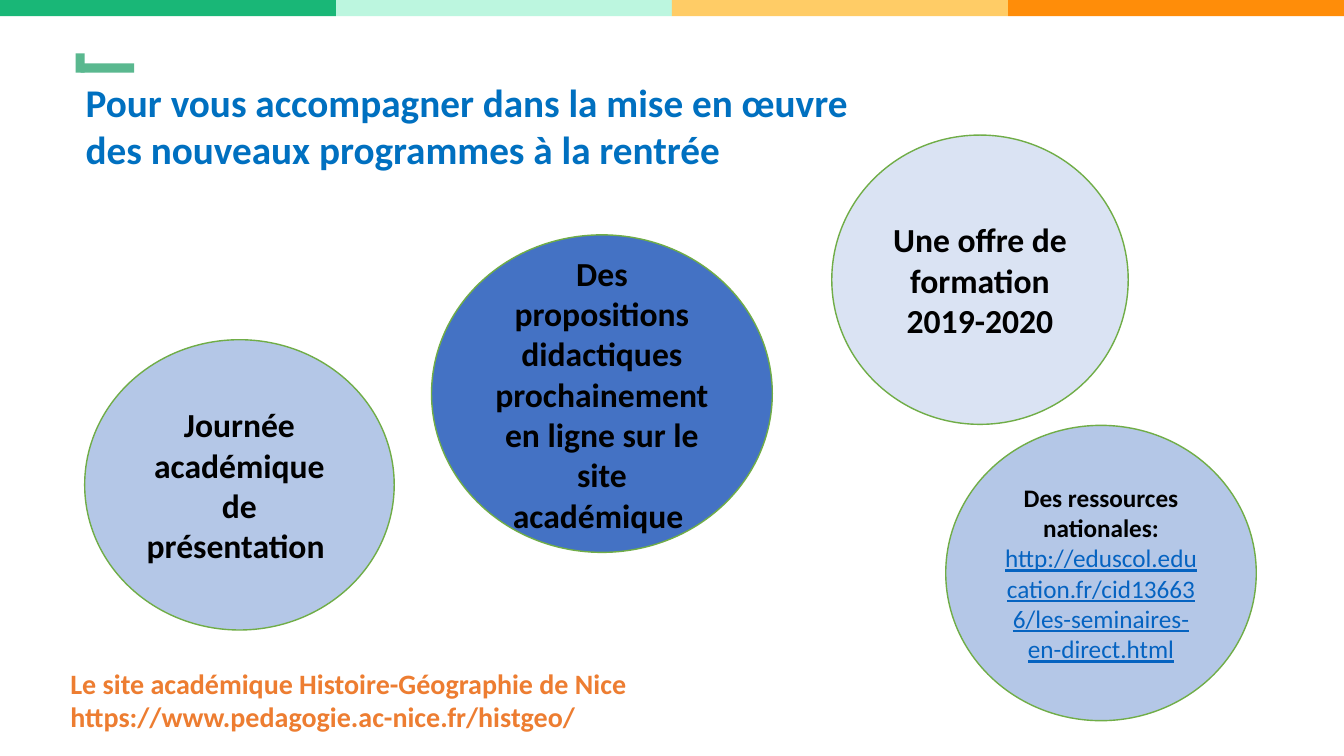
from dataclasses import dataclass

from pptx import Presentation
from pptx.dml.color import RGBColor
from pptx.enum.shapes import MSO_SHAPE
from pptx.enum.text import MSO_ANCHOR, MSO_AUTO_SIZE, PP_ALIGN
from pptx.util import Inches, Pt

RECTANGLE, OVAL = MSO_SHAPE.RECTANGLE, MSO_SHAPE.OVAL
TOP, MIDDLE = MSO_ANCHOR.TOP, MSO_ANCHOR.MIDDLE
LEFT, CENTER = PP_ALIGN.LEFT, PP_ALIGN.CENTER
NO_AUTOFIT = MSO_AUTO_SIZE.NONE


@dataclass(frozen=True)
class Theme:
    font: str = "Calibri"
    title: str = "0070C0"
    body: str = "000000"
    link: str = "0563C1"
    site: str = "ED7D31"
    background: str = "FFFFFF"
    outline: str = "70AD47"
    corner: str = "5AB88F"
    pale: str = "DAE3F3"
    light: str = "B4C7E7"
    strong: str = "4472C4"
    title_size: int = 28
    circle_size: int = 24
    site_size: int = 20
    resource_size: int = 18


THEME = Theme()

TITLE = ["Pour vous accompagner dans la mise en œuvre",
         "des nouveaux programmes à la rentrée"]
TITLE_BOX = (0.75, 0.73, 11.71, 1.04)

SITE = ["Le site académique Histoire-Géographie de Nice",
        "https://www.pedagogie.ac-nice.fr/histgeo/"]
SITE_BOX = (0.6, 6.56, 8.29, 0.77)

# label, web address, box, fill, type size
CIRCLES = [
    ("Journée académique de présentation ", "",
     (0.84, 3.37, 3.07, 2.88), THEME.light, THEME.circle_size),
    ("Des propositions didactiques prochainement en ligne sur le site académique ", "",
     (4.28, 2.33, 3.38, 3.15), THEME.strong, THEME.circle_size),
    ("Une offre de formation 2019-2020", "",
     (8.25, 1.34, 2.94, 2.87), THEME.pale, THEME.circle_size),
    ("Des ressources nationales: ",
     "http://eduscol.education.fr/cid136636/les-seminaires-en-direct.html",
     (9.38, 4.22, 3.08, 2.93), THEME.light, THEME.resource_size),
]

BAND_COLORS = ["19B777", "BCF6DF", "FFCC66", "FF8D09"]
BAND_HEIGHT = 0.16
CORNER_BARS = [(0.75, 0.53, 0.09, 0.19), (0.8, 0.63, 0.53, 0.09)]
SLIDE_WIDTH, SLIDE_HEIGHT = 13.33, 7.5


def add_filled(slide, kind, box, fill, outline=None, weight=1):
    shape = slide.shapes.add_shape(kind, *map(Inches, box))
    shape.shadow.inherit = False
    shape.fill.solid()
    shape.fill.fore_color.rgb = RGBColor.from_string(fill)
    if outline:
        shape.line.color.rgb = RGBColor.from_string(outline)
        shape.line.width = Pt(weight)
    else:
        shape.line.fill.background()
    return shape


def style_run(run, size, color, bold=True):
    run.font.name = THEME.font
    run.font.size = Pt(size)
    run.font.bold = bold
    run.font.color.rgb = RGBColor.from_string(color)


def write(frame, lines, size, color, align=LEFT, anchor=TOP):
    frame.text = "\n".join(lines)
    frame.word_wrap = True
    frame.auto_size = NO_AUTOFIT
    frame.vertical_anchor = anchor
    for paragraph in frame.paragraphs:
        paragraph.alignment = align
        for run in paragraph.runs:
            style_run(run, size, color)


def add_title(slide):
    title = slide.shapes.title
    title.left, title.top, title.width, title.height = map(Inches, TITLE_BOX)
    write(title.text_frame, TITLE, THEME.title_size, THEME.title)


def add_circle(slide, label, address, box, fill, size):
    circle = add_filled(slide, OVAL, box, fill, THEME.outline)
    frame = circle.text_frame
    write(frame, [label], size, THEME.body, CENTER, MIDDLE)
    if address:
        run = frame.paragraphs[0].add_run()
        run.text = address
        style_run(run, size, THEME.link, bold=False)
        run.font.underline = True


def add_decoration(slide):
    band_width = SLIDE_WIDTH / len(BAND_COLORS)
    for index, color in enumerate(BAND_COLORS):
        add_filled(slide, RECTANGLE, (index * band_width, 0, band_width, BAND_HEIGHT), color)
    for bar in CORNER_BARS:
        add_filled(slide, RECTANGLE, bar, THEME.corner)


def add_site(slide):
    site = add_filled(slide, RECTANGLE, SITE_BOX, THEME.background, THEME.background, 0.75)
    write(site.text_frame, SITE, THEME.site_size, THEME.site)


def main():
    deck = Presentation()
    deck.slide_width, deck.slide_height = Inches(SLIDE_WIDTH), Inches(SLIDE_HEIGHT)
    slide = deck.slides.add_slide(deck.slide_layouts.get_by_name("Title Only"))
    add_title(slide)
    add_decoration(slide)
    add_site(slide)
    for circle in CIRCLES:
        add_circle(slide, *circle)
    deck.save("out.pptx")


if __name__ == "__main__":
    main()
